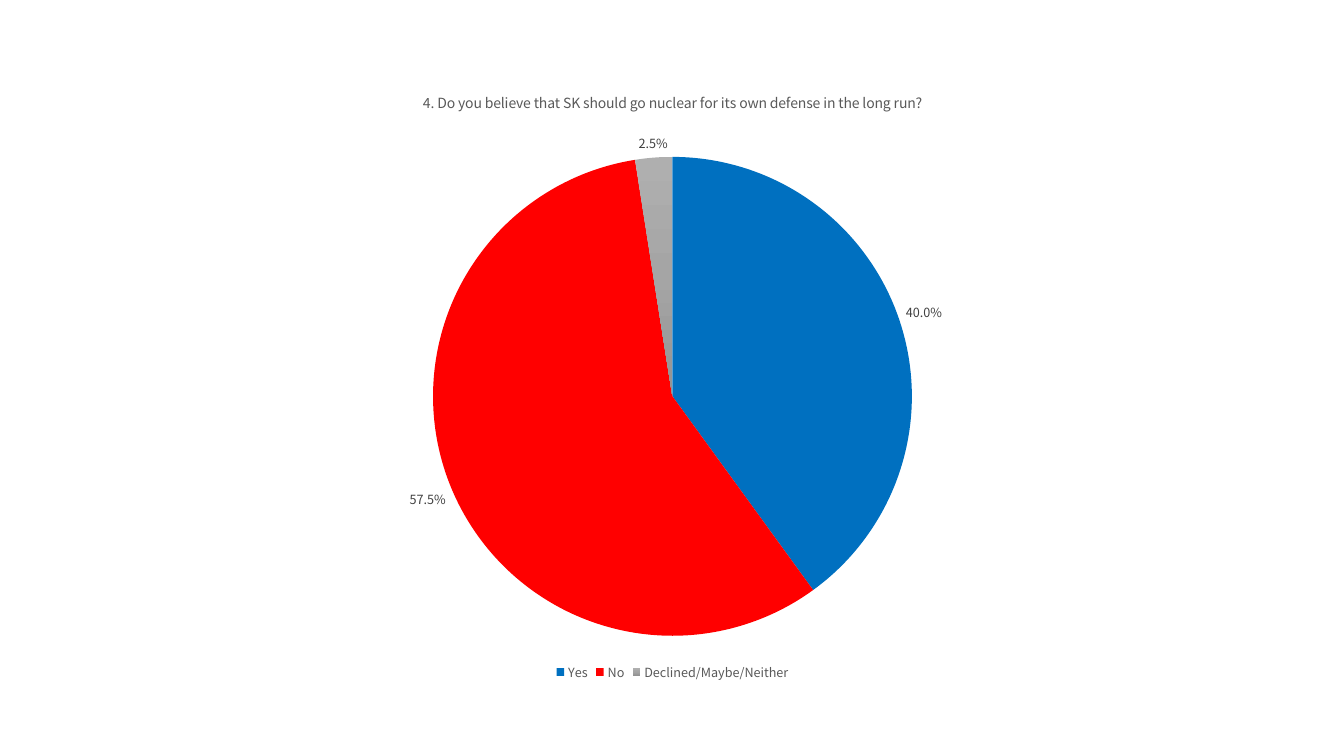
from copy import deepcopy

from lxml import etree
from pptx import Presentation
from pptx import util as u
from pptx.chart.data import CategoryChartData
from pptx.dml.color import RGBColor
from pptx.enum import chart as charts
from pptx.oxml.ns import qn

EMU_PER_PX = 914400 / 100.8


def px(length):
    return u.Emu(round(length * EMU_PER_PX))


def color(value):
    return RGBColor.from_string(value)


def assign(target, values):
    for name, value in values.items():
        setattr(target, name, value)


class SurveySlide:
    font_name = "Noto Sans CJK KR"
    title_gray = "595959"
    label_gray = "404040"

    def __init__(self, presentation):
        self.slide = presentation.slides.add_slide(presentation.slide_layouts[6])

    def style_font(self, font, size, value):
        assign(font, {"name": self.font_name, "size": u.Pt(size), "bold": False})
        font.color.rgb = color(value)

    def pie(self, box, question, answers, number_format):
        data = CategoryChartData(number_format=number_format)
        data.categories = list(answers)
        data.add_series(question, list(answers.values()))
        chart = self.slide.shapes.add_chart(
            charts.XL_CHART_TYPE.PIE, *map(px, box), data).chart
        self.style_font(chart.font, 10, "000000")
        self.title(chart, question)
        self.legend(chart)
        self.labels(chart.plots[0], number_format)
        return chart

    def title(self, chart, question):
        chart.has_title = True
        chart.chart_title.include_in_layout = False
        paragraph = chart.chart_title.text_frame.paragraphs[0]
        run = paragraph.add_run()
        run.text = question
        for font in (paragraph.font, run.font):
            self.style_font(font, 10, self.title_gray)

    def legend(self, chart):
        chart.has_legend = True
        assign(chart.legend, {
            "position": charts.XL_LEGEND_POSITION.BOTTOM,
            "include_in_layout": False,
        })
        self.style_font(chart.legend.font, 9, self.title_gray)

    def labels(self, plot, number_format):
        assign(plot, {"vary_by_categories": True, "has_data_labels": True})
        assign(plot.data_labels, {
            "show_value": True,
            "show_percentage": False,
            "number_format": number_format,
            "number_format_is_linked": False,
            "position": charts.XL_LABEL_POSITION.OUTSIDE_END,
        })
        self.style_font(plot.data_labels.font, 9, self.label_gray)

    def place_plot(self, chart, fractions):
        plot_area = chart.element.find(".//" + qn("c:plotArea"))
        layout = plot_area.find(qn("c:layout"))
        if layout is None:
            layout = etree.Element(qn("c:layout"))
            plot_area.insert(0, layout)
        manual = etree.SubElement(layout, qn("c:manualLayout"))
        settings = {"layoutTarget": "inner", "xMode": "edge", "yMode": "edge", **fractions}
        for name, value in settings.items():
            etree.SubElement(manual, qn("c:" + name)).set("val", str(value))

    def slice_fill(self, chart, index, colors):
        point_format = chart.plots[0].series[0].points[index].format
        point_format.line.fill.background()
        fill = point_format.fill
        if len(colors) == 1:
            fill.solid()
            fill.fore_color.rgb = color(colors[0])
            return
        fill.gradient()
        fill.gradient_angle = 270
        stops = chart.element.find(".//" + qn("a:gsLst"))
        while len(stops) < len(colors):
            stops.insert(1, deepcopy(stops[0]))
        for order, (stop, value) in enumerate(zip(fill.gradient_stops, colors)):
            stop.position = order / (len(colors) - 1)
            stop.color.rgb = color(value)


def main():
    presentation = Presentation()
    assign(presentation, {"slide_width": px(1344), "slide_height": px(756)})
    survey = SurveySlide(presentation)
    chart = survey.pie(
        (71, 71, 1203, 614),
        "4. Do you believe that SK should go nuclear for its own defense in the long run?",
        {"Yes": 0.4, "No": 0.575, "Declined/Maybe/Neither": 0.025},
        "0.0%",
    )
    survey.place_plot(chart, {"x": 0.3, "y": 0.14, "w": 0.4, "h": 0.78})
    slice_colors = [["0070C0"], ["FF0000"], ["AFAFAF", "A5A5A5", "939393"]]
    for index, colors in enumerate(slice_colors):
        survey.slice_fill(chart, index, colors)
    presentation.save("out.pptx")


if __name__ == "__main__":
    main()
